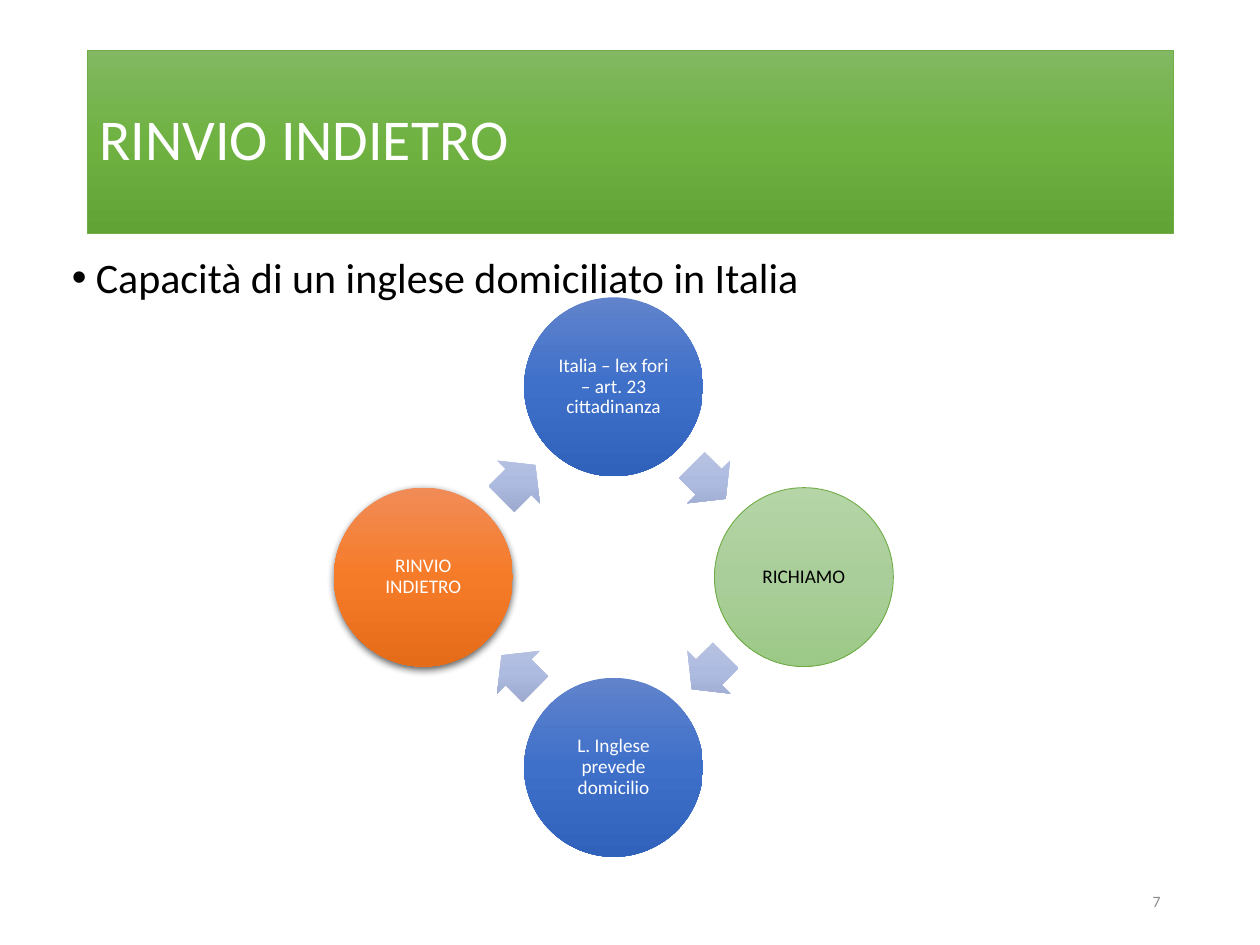
from math import cos, radians, sin

from lxml import etree
from pptx import Presentation
from pptx.dml.color import RGBColor
from pptx.enum.shapes import MSO_SHAPE as Shape
from pptx.enum.text import MSO_ANCHOR as Anchor, MSO_AUTO_SIZE as AutoSize, PP_ALIGN as Align
from pptx.oxml.ns import qn
from pptx.util import Inches, Pt

COLORS = {"white": "FFFFFF", "black": "000000", "gray": "8C8C8C", "outline": "70AD47"}
GRADIENTS = {
    "green": ("81B861", "6FB242", "62A336"),
    "blue": ("6183CB", "3E70CA", "3062BB"),
    "pale green": ("B5D5A7", "AACE9A", "9CC987"),
    "orange": ("F18C57", "F67B28", "E56C19"),
    "lavender": ("BBC5E3", "AEBBE0", "98A4CB"),
}
# Clockwise from the top: text, gradient, text colour, outlined, shadowed
STEPS = [
    ("Italia – lex fori – art. 23 cittadinanza", "blue", "white", False, False),
    ("RICHIAMO", "pale green", "black", True, False),
    ("L. Inglese prevede domicilio", "blue", "white", False, False),
    ("RINVIO INDIETRO", "orange", "white", False, True),
]


def place(shape, box):
    shape.left, shape.top, shape.width, shape.height = (Inches(v) for v in box)


def fill_gradient(shape, name):
    """Fill from top to bottom with three evenly spaced stops."""
    shape.fill.gradient()
    shape.fill.gradient_angle = 270
    gradient = shape.fill._xPr.find(qn("a:gradFill"))
    gradient.set("rotWithShape", "0")
    stops = gradient.find(qn("a:gsLst"))
    for old in list(stops):
        stops.remove(old)
    for position, color in zip((0, 50000, 100000), GRADIENTS[name]):
        stop = etree.SubElement(stops, qn("a:gs"), pos=str(position))
        etree.SubElement(stop, qn("a:srgbClr"), val=color)


def draw_outline(shape, visible):
    if visible:
        shape.line.color.rgb = RGBColor.from_string(COLORS["outline"])
        shape.line.width = Pt(0.5)
    else:
        shape.line.fill.background()


def cast_shadow(shape):
    effects = shape._element.spPr.find(qn("a:effectLst"))
    shadow = etree.SubElement(effects, qn("a:outerShdw"), blurRad=str(Pt(4.5)),
                              dist=str(Pt(1.5)), dir="5400000", algn="ctr", rotWithShape="0")
    color = etree.SubElement(shadow, qn("a:srgbClr"), val=COLORS["black"])
    etree.SubElement(color, qn("a:alpha"), val="63000")


def write(shape, text, size, color, align, anchor=Anchor.MIDDLE, spacing=0.9):
    frame = shape.text_frame
    frame.word_wrap = True
    frame.auto_size = AutoSize.NONE
    frame.vertical_anchor = anchor
    paragraph = frame.paragraphs[0]
    paragraph.alignment = align
    paragraph.line_spacing = spacing
    run = paragraph.add_run()
    run.text = text
    run.font.name = "Calibri"
    run.font.size = Pt(size)
    run.font.color.rgb = RGBColor.from_string(COLORS[color])
    return paragraph


def add_title(slide, box):
    title = slide.shapes.title
    place(title, box)
    fill_gradient(title, "green")
    draw_outline(title, True)
    write(title, "RINVIO INDIETRO", 33, "white", Align.LEFT)


def add_body(slide, box):
    body = slide.placeholders[1]
    place(body, box)
    bullet = write(body, "Capacità di un inglese domiciliato in Italia", 24, "black",
                   Align.LEFT, Anchor.TOP)
    bullet.space_before = Pt(7.5)
    properties = bullet._p.get_or_add_pPr()
    properties.set("marL", str(Inches(0.19)))
    properties.set("indent", str(Inches(-0.19)))
    etree.SubElement(properties, qn("a:buFont"), typeface="Arial")
    etree.SubElement(properties, qn("a:buChar"), char="•")


def add_page_number(slide, box):
    number = slide.shapes.add_textbox(*(Inches(v) for v in box))
    write(number, "7", 9, "gray", Align.RIGHT, spacing=1.0)


def add_centered(shapes, kind, x, y, width, height):
    shape = shapes.add_shape(kind, Inches(x - width / 2), Inches(y - height / 2),
                             Inches(width), Inches(height))
    shape.shadow.inherit = False
    return shape


def add_step(shapes, x, y, diameter, step):
    text, gradient, color, outlined, shadowed = step
    circle = add_centered(shapes, Shape.OVAL, x, y, diameter, diameter)
    fill_gradient(circle, gradient)
    draw_outline(circle, outlined)
    if shadowed:
        cast_shadow(circle)
    frame = circle.text_frame
    frame.margin_left = frame.margin_right = Inches(0.02)
    frame.margin_top = frame.margin_bottom = Inches(0.02)
    write(circle, text, 11, color, Align.CENTER)


def add_arrow(shapes, x, y, rotation):
    arrow = add_centered(shapes, Shape.RIGHT_ARROW, x, y, 0.38, 0.48)
    arrow.adjustments[0], arrow.adjustments[1] = 0.6, 0.5
    arrow.rotation = rotation
    fill_gradient(arrow, "lavender")
    draw_outline(arrow, False)


def add_cycle(slide, box):
    """Place the steps on a ring, with an arrow halfway between neighbours."""
    left, top, width, height = box
    diameter = 1.42
    center_x, center_y = left + width / 2, top + height / 2
    radius = (width - diameter) / 2
    arrow_radius = radius * cos(radians(45))
    turn = 360 / len(STEPS)
    shapes = slide.shapes.add_group_shape().shapes
    for index, step in enumerate(STEPS):
        angle = radians(index * turn - 90)
        add_step(shapes, center_x + radius * cos(angle), center_y + radius * sin(angle),
                 diameter, step)
        rotation = (index + 0.5) * turn
        angle = radians(rotation - 90)
        add_arrow(shapes, center_x + arrow_radius * cos(angle),
                  center_y + arrow_radius * sin(angle), rotation)


def main():
    deck = Presentation()
    deck.slide_width, deck.slide_height = Inches(10), Inches(7.5)
    slide = deck.slides.add_slide(deck.slide_layouts[1])
    add_title(slide, (0.69, 0.4, 8.62, 1.45))
    add_body(slide, (0.47, 1.99, 9.03, 0.57))
    add_page_number(slide, (7.06, 6.95, 2.25, 0.4))
    add_cycle(slide, (2.65, 2.36, 4.44, 4.44))
    deck.save("out.pptx")


if __name__ == "__main__":
    main()
